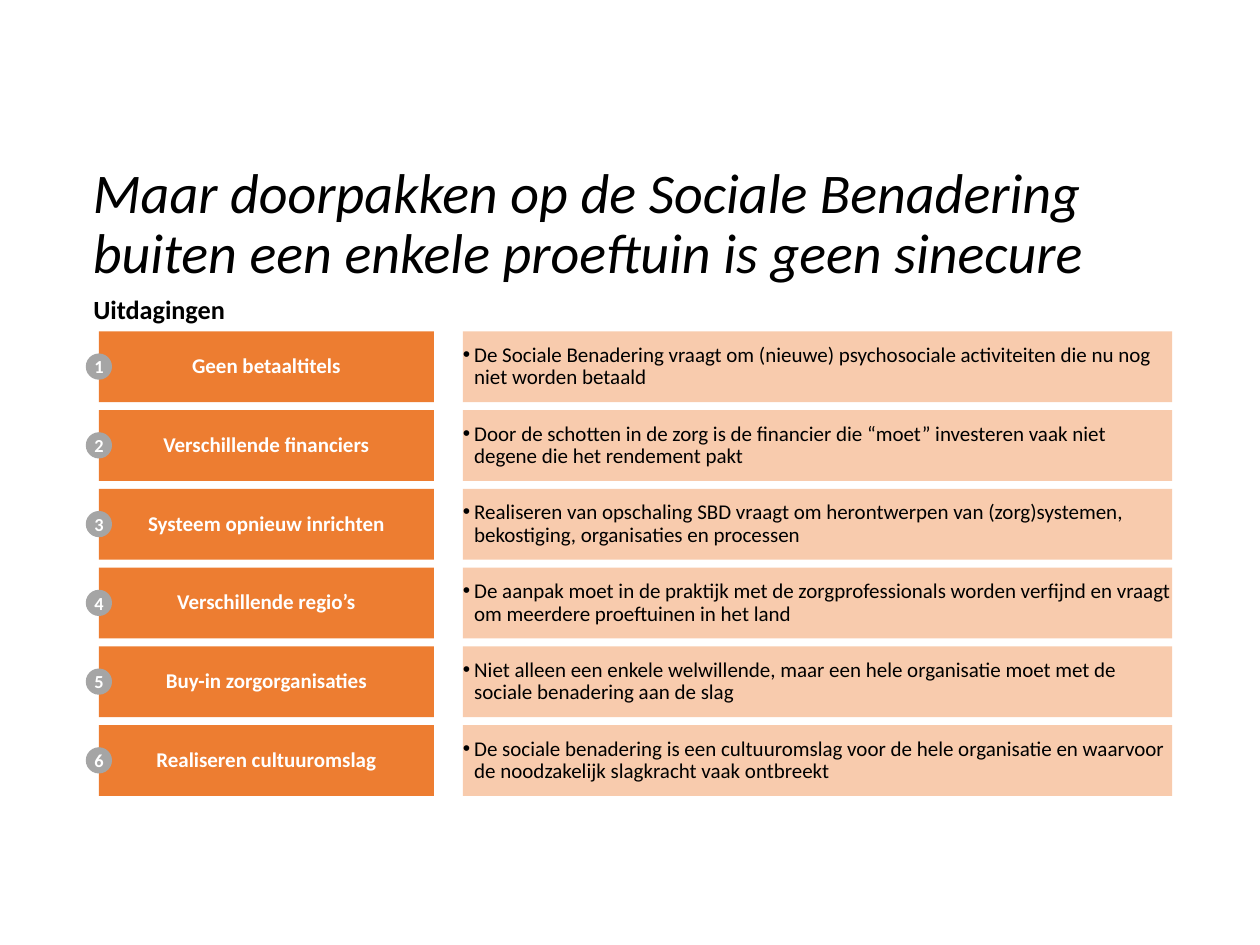
from lxml.etree import SubElement
from pptx import Presentation
from pptx.dml.color import RGBColor as Rgb
from pptx.enum.shapes import MSO_SHAPE as Kind
from pptx.enum.text import MSO_ANCHOR as Anchor, PP_ALIGN as Align
from pptx.oxml.ns import qn
from pptx.util import Pt

ORANGE, PEACH, GRAY = "ED7D31", "F8CBAD", "A5A5A5"
BLACK, WHITE = "000000", "FFFFFF"
TOP, STEP, HIGH = 189.4, 45, 40.4

ROWS = [
    ("Geen betaaltitels",
     "De Sociale Benadering vraagt om (nieuwe) psychosociale activiteiten die nu nog niet worden betaald"),
    ("Verschillende financiers",
     "Door de schotten in de zorg is de financier die “moet” investeren vaak niet degene die het rendement pakt"),
    ("Systeem opnieuw inrichten",
     "Realiseren van opschaling SBD vraagt om herontwerpen van (zorg)systemen, bekostiging, organisaties en processen"),
    ("Verschillende regio’s",
     "De aanpak moet in de praktijk met de zorgprofessionals worden verfijnd en vraagt om meerdere proeftuinen in het land"),
    ("Buy-in zorgorganisaties",
     "Niet alleen een enkele welwillende, maar een hele organisatie moet met de sociale benadering aan de slag"),
    ("Realiseren cultuuromslag",
     "De sociale benadering is een cultuuromslag voor de hele organisatie en waarvoor de noodzakelijk slagkracht vaak ontbreekt"),
]

TITLE = {"size": Pt(32), "italic": True}
HEAD = {"size": Pt(15), "bold": True}
LABEL = {"size": Pt(12), "bold": True}
BODY = {"size": Pt(12)}
BADGE = {"size": Pt(10.5), "bold": True}


def color(code):
    return Rgb.from_string(code)


def assign(item, values):
    for key, value in values.items():
        setattr(item, key, value)


def add_mark(para, indent):
    props = para._p.get_or_add_pPr()
    props.set("marL", str(Pt(indent)))
    props.set("indent", str(-Pt(indent)))
    SubElement(props, qn("a:buFont")).set("typeface", "Arial")
    SubElement(props, qn("a:buChar")).set("char", "•")


def write(shape, text, form, ink, align=Align.LEFT, anchor=Anchor.MIDDLE,
          pad=(0, 0), wrap=True, space=0.9, mark=False):
    side, edge = map(Pt, pad)
    frame = shape.text_frame
    assign(frame, {"margin_left": side, "margin_right": side,
                   "margin_top": edge, "margin_bottom": edge,
                   "word_wrap": wrap, "vertical_anchor": anchor})
    para = frame.paragraphs[0]
    assign(para, {"alignment": align, "line_spacing": space})
    if mark:
        add_mark(para, 6.5)
    run = para.add_run()
    run.text = text
    assign(run.font, {"name": "Calibri", **form})
    run.font.color.rgb = color(ink)


def add_text(slide, box, text, form, **rest):
    shape = slide.shapes.add_textbox(*map(Pt, box))
    write(shape, text, form, BLACK, **rest)


def add_block(slide, kind, box, fill, text, form, ink, **rest):
    shape = slide.shapes.add_shape(kind, *map(Pt, box))
    shape.shadow.inherit = False
    shape.fill.solid()
    shape.fill.fore_color.rgb = color(fill)
    shape.line.fill.background()
    write(shape, text, form, ink, **rest)


def add_row(slide, index, label, body):
    top = TOP + index * STEP
    add_block(slide, Kind.RECTANGLE, (56.5, top, 191.5, HIGH), ORANGE,
              label, LABEL, WHITE, align=Align.CENTER)
    add_block(slide, Kind.RECTANGLE, (264.5, top, 405.4, HIGH), PEACH,
              body, BODY, BLACK, mark=True)
    add_block(slide, Kind.OVAL, (49, top + 12.6, 15, 15), GRAY,
              str(index + 1), BADGE, WHITE, align=Align.CENTER,
              wrap=False, space=1.0)


def main():
    deck = Presentation()
    assign(deck, {"slide_width": Pt(720), "slide_height": Pt(540)})
    slide = deck.slides.add_slide(deck.slide_layouts[6])
    add_text(slide, (49.5, 89.5, 621, 78.5),
             "Maar doorpakken op de Sociale Benadering buiten een enkele proeftuin is geen sinecure",
             TITLE, pad=(3.6, 3.6))
    add_text(slide, (50.4, 166.3, 481, 23.8), "Uitdagingen", HEAD,
             anchor=Anchor.TOP, pad=(2.9, 3.6))
    for index, (label, body) in enumerate(ROWS):
        add_row(slide, index, label, body)
    deck.save("out.pptx")


if __name__ == "__main__":
    main()
